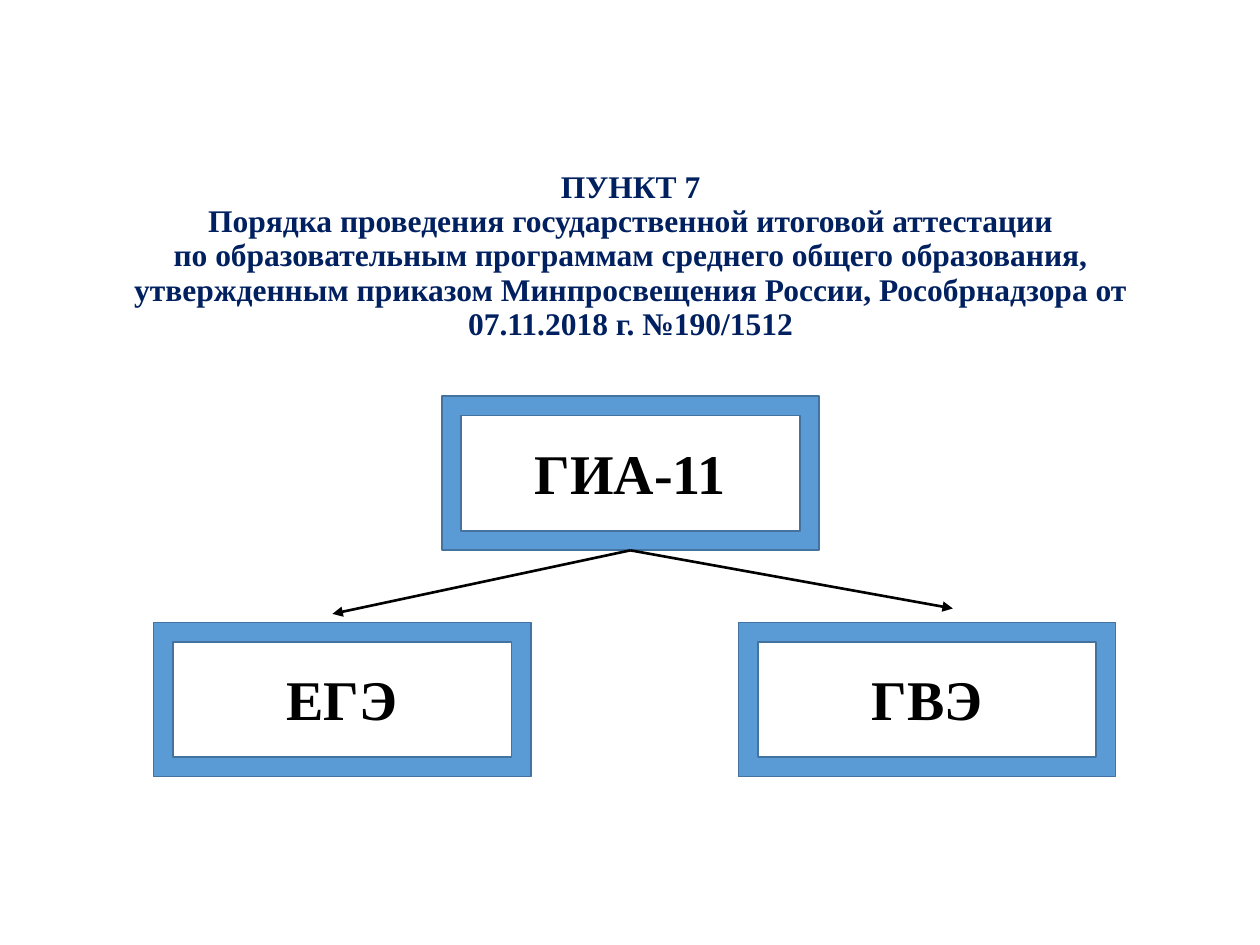
from lxml import etree
from pptx import Presentation
from pptx.dml.color import RGBColor
from pptx.enum.shapes import MSO_CONNECTOR, MSO_SHAPE
from pptx.enum.text import MSO_ANCHOR, PP_ALIGN
from pptx.oxml.ns import qn
from pptx.util import Pt


def rgb(value):
    return RGBColor.from_string(value)


def add_text(s, box, text, size, color):
    """Add a centred bold text box; \\v in the text is a line break."""
    sp = s.shapes.add_textbox(*map(Pt, box))
    tf = sp.text_frame
    tf.word_wrap = True
    p = tf.paragraphs[0]
    p.text = text
    p.alignment = PP_ALIGN.CENTER
    style = {"name": "Times New Roman", "size": Pt(size), "bold": True}
    for r in p.runs:
        for key, value in style.items():
            setattr(r.font, key, value)
        r.font.color.rgb = rgb(color)
    return tf


prs = Presentation()
prs.slide_width, prs.slide_height = Pt(720), Pt(540)
s = prs.slides.add_slide(prs.slide_layouts[6])

# Title, raised within its box by the bottom margin
title = "\v".join([
    "ПУНКТ 7",
    "Порядка проведения государственной итоговой аттестации",
    "по образовательным программам среднего общего образования, "
    "утвержденным приказом Минпросвещения России, Рособрнадзора от "
    "07.11.2018 г. №190/1512",
])
tf = add_text(s, (57.6, 126.7, 605.5, 79.2), title, 18, "002060")
tf.vertical_anchor = MSO_ANCHOR.MIDDLE
tf.margin_bottom = Pt(42.7)
tf.paragraphs[0].line_spacing = 0.9

# Framed boxes with their labels
frames = []
for x, y, label in [(252.5, 226.5, "ГИА-11"),
                    (87.8, 355.8, "ЕГЭ"),
                    (422, 355.8, "ГВЭ")]:
    sp = s.shapes.add_shape(MSO_SHAPE.FRAME, Pt(x), Pt(y), Pt(215.5), Pt(88))
    sp.shadow.inherit = False
    sp.fill.solid()
    sp.fill.fore_color.rgb = rgb("5B9BD5")
    sp.line.color.rgb = rgb("43739E")
    sp.line.width = Pt(1)
    frames.append(sp)
    add_text(s, (x + 25.2, y + 20.6, 165, 46), label, 32, "000000")

# Arrows from the top box towards the lower ones
for x, y in [(190, 350.8), (544.5, 347.7)]:
    line = s.shapes.add_connector(MSO_CONNECTOR.STRAIGHT,
                                  Pt(360), Pt(314.5), Pt(x), Pt(y))
    line.begin_connect(frames[0], 2)
    line.line.color.rgb = rgb("000000")
    line.line.width = Pt(1.5)
    etree.SubElement(line.line._get_or_add_ln(), qn("a:tailEnd"), type="triangle")
    etree.SubElement(line._element.spPr, qn("a:effectLst"))

prs.save("out.pptx")
